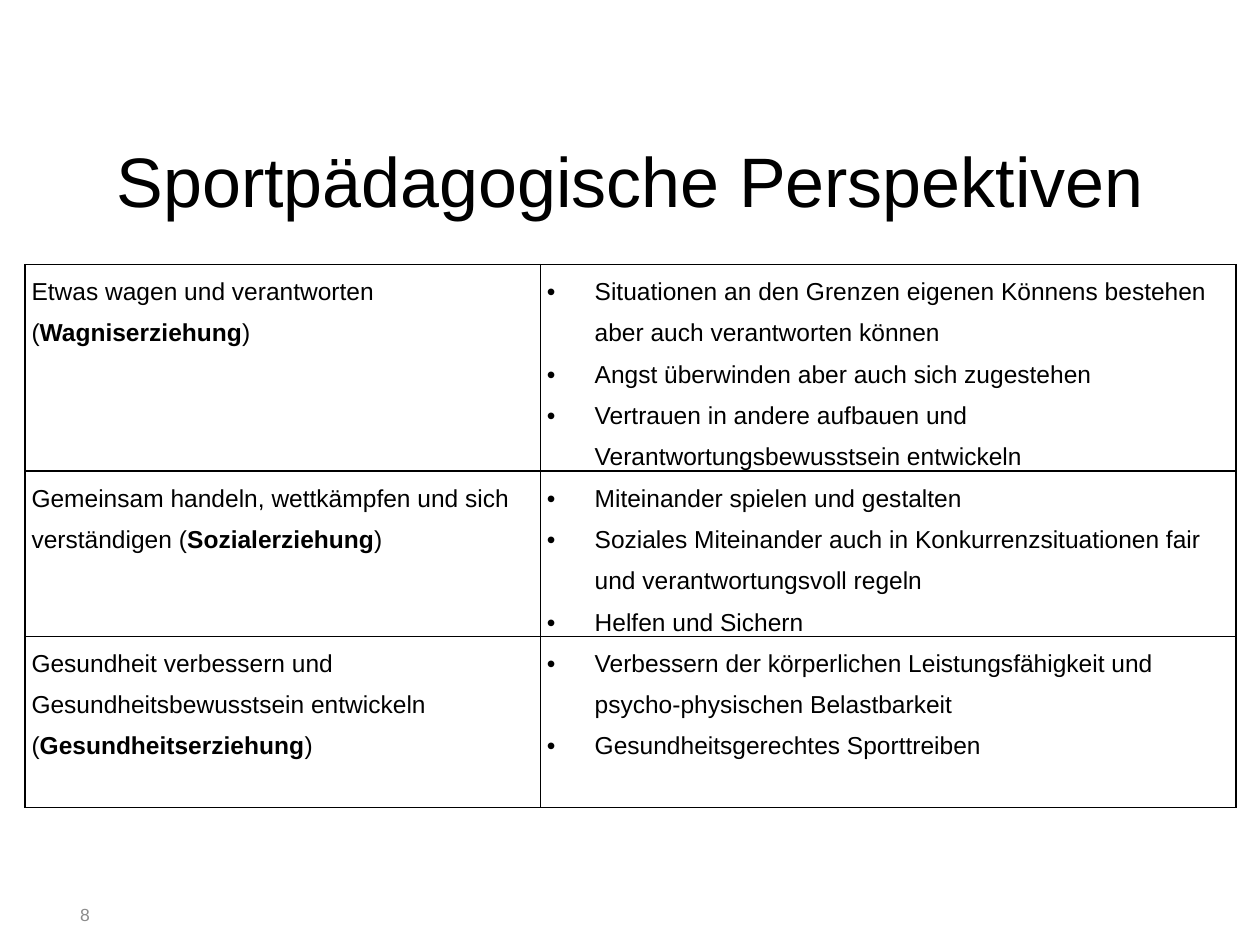
from dataclasses import dataclass

from lxml.etree import SubElement
from pptx import Presentation
from pptx.dml.color import RGBColor
from pptx.enum.text import MSO_ANCHOR as Anchor, PP_ALIGN as Align
from pptx.oxml.ns import qn
from pptx.util import Inches, Pt

BLACK = RGBColor(0, 0, 0)
WHITE = RGBColor(255, 255, 255)
GRAY = RGBColor(0x8C, 0x8C, 0x8C)
FONT = "Arial"
INDENT = Inches(0.38)


@dataclass
class Aspect:
    lead: str
    term: str
    points: list[str]
    height: float


ASPECTS = [
    Aspect("Etwas wagen und verantworten (", "Wagniserziehung", [
        "Situationen an den Grenzen eigenen Könnens bestehen aber auch verantworten können",
        "Angst überwinden aber auch sich zugestehen",
        "Vertrauen in andere aufbauen und Verantwortungsbewusstsein entwickeln",
    ], 1.64),
    Aspect("Gemeinsam handeln, wettkämpfen und sich verständigen (", "Sozialerziehung", [
        "Miteinander spielen und gestalten",
        "Soziales Miteinander auch in Konkurrenzsituationen fair und verantwortungsvoll regeln",
        "Helfen und Sichern",
    ], 1.31),
    Aspect("Gesundheit verbessern und Gesundheitsbewusstsein entwickeln (",
           "Gesundheitserziehung", [
               "Verbessern der körperlichen Leistungsfähigkeit und psycho-physischen Belastbarkeit",
               "Gesundheitsgerechtes Sporttreiben",
           ], 1.36),
]
WIDTHS = [4.09, 5.52]


def style(run, size: float, color: RGBColor = BLACK, bold: bool = False) -> None:
    run.font.name = FONT
    run.font.size = Pt(size)
    run.font.color.rgb = color
    run.font.bold = bold


def place(shape, left: float, top: float, width: float, height: float) -> None:
    shape.left, shape.top = Inches(left), Inches(top)
    shape.width, shape.height = Inches(width), Inches(height)


def write(shape, text: str, size: float, color: RGBColor) -> None:
    """Fill a shape with one centred line."""
    frame = shape.text_frame
    frame.text = text
    frame.word_wrap = True
    frame.vertical_anchor = Anchor.MIDDLE
    para = frame.paragraphs[0]
    para.alignment = Align.CENTER
    style(para.runs[0], size, color)


def space(para, before: float) -> None:
    para.line_spacing = 1.5
    para.space_before = Pt(before)


def frame_cell(cell) -> None:
    """Set white fill, margins and black borders."""
    cell.fill.solid()
    cell.fill.fore_color.rgb = WHITE
    cell.margin_left = cell.margin_right = Inches(0.05)
    cell.margin_top = cell.margin_bottom = 0
    props = cell._tc.get_or_add_tcPr()
    for i, side in enumerate(("lnL", "lnR", "lnT", "lnB")):
        line = props.makeelement(qn(f"a:{side}"), {"w": str(Pt(1))})
        fill = SubElement(line, qn("a:solidFill"))
        SubElement(fill, qn("a:srgbClr"), val=str(BLACK))
        props.insert(i, line)


def add_lead(cell, aspect: Aspect) -> None:
    para = cell.text_frame.paragraphs[0]
    space(para, 3)
    for text, bold in ((aspect.lead, False), (aspect.term, True), (")", False)):
        run = para.add_run()
        run.text = text
        style(run, 14, bold=bold)


def add_points(cell, points: list[str]) -> None:
    frame = cell.text_frame
    frame.text = "\n".join(points)
    for i, para in enumerate(frame.paragraphs):
        space(para, 0 if i else 3)
        style(para.runs[0], 14)
        props = para._p.get_or_add_pPr()
        props.set("marL", str(INDENT))
        props.set("indent", str(-INDENT))
        SubElement(props, qn("a:buFont"), typeface=FONT)
        SubElement(props, qn("a:buChar"), char="•")


def main() -> None:
    prs = Presentation()
    prs.slide_width, prs.slide_height = Inches(10), Inches(7.5)
    slide = prs.slides.add_slide(prs.slide_layouts[5])

    # Title
    title = slide.shapes.title
    place(title, 0.5, 0.99, 9, 0.87)
    write(title, "Sportpädagogische Perspektiven", 40, BLACK)

    # Table of perspectives
    total = sum(a.height for a in ASPECTS)
    table = slide.shapes.add_table(
        len(ASPECTS), len(WIDTHS), Inches(0.2), Inches(2.1),
        Inches(sum(WIDTHS)), Inches(total)).table
    table.first_row = table.horz_banding = False
    for col, width in zip(table.columns, WIDTHS):
        col.width = Inches(width)
    for row, aspect in zip(table.rows, ASPECTS):
        row.height = Inches(aspect.height)
        left, right = row.cells
        add_lead(left, aspect)
        add_points(right, aspect.points)
        for cell in (left, right):
            frame_cell(cell)

    # Page number
    box = slide.shapes.add_textbox(0, 0, 0, 0)
    place(box, 0.28, 7.06, 0.79, 0.4)
    write(box, "8", 10, GRAY)

    prs.save("out.pptx")


if __name__ == "__main__":
    main()
